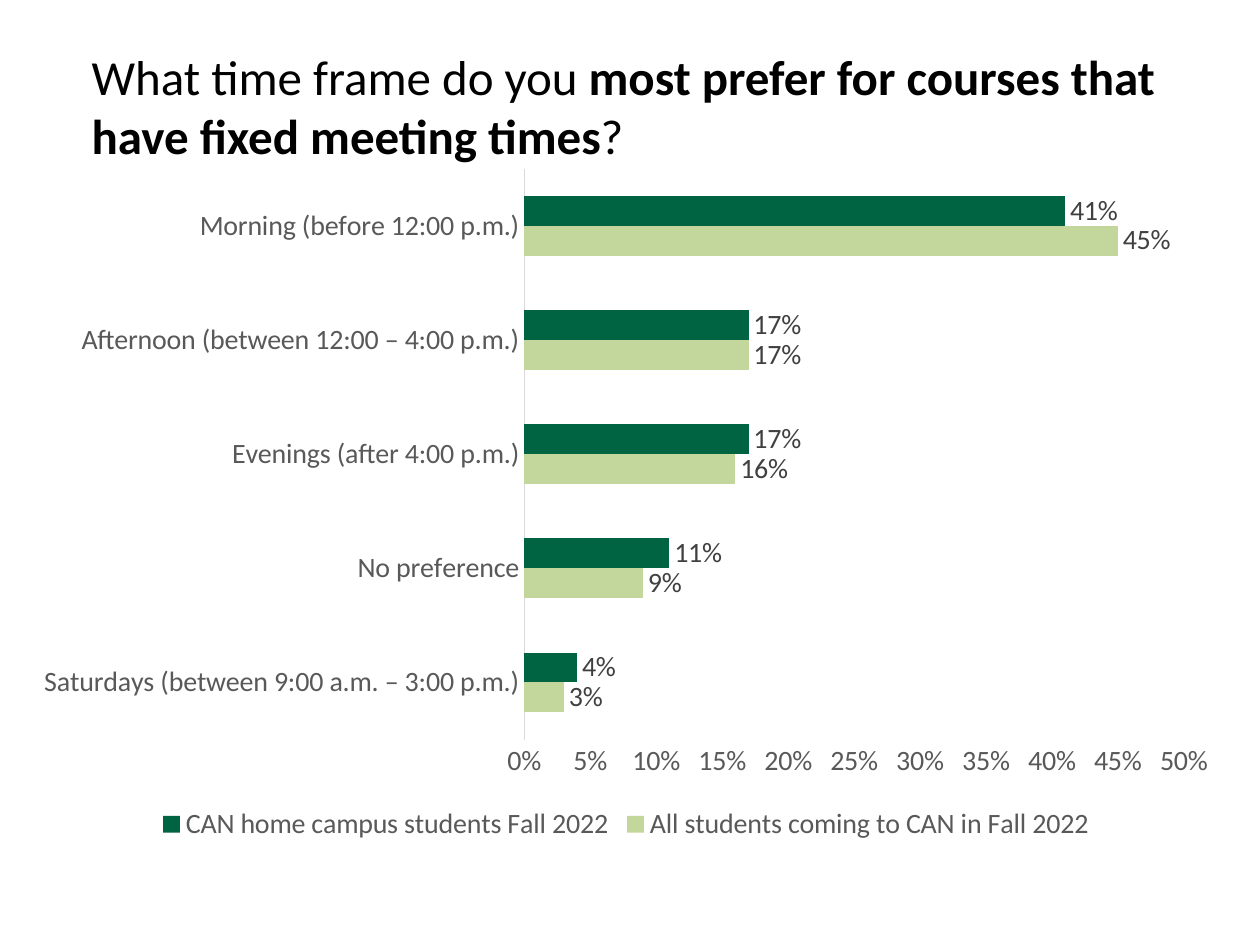
from pptx import Presentation
from pptx.chart.data import CategoryChartData
from pptx.dml.color import RGBColor
from pptx.enum.chart import XL_CHART_TYPE, XL_LABEL_POSITION, XL_LEGEND_POSITION, XL_TICK_MARK
from pptx.enum.text import MSO_ANCHOR, MSO_AUTO_SIZE, PP_ALIGN
from pptx.util import Emu, Pt

BAR_CLUSTERED = XL_CHART_TYPE.BAR_CLUSTERED
OUTSIDE_END = XL_LABEL_POSITION.OUTSIDE_END
LEGEND_BOTTOM = XL_LEGEND_POSITION.BOTTOM
NO_TICK = XL_TICK_MARK.NONE
TOP = MSO_ANCHOR.TOP
GROW = MSO_AUTO_SIZE.SHAPE_TO_FIT_TEXT
LEFT = PP_ALIGN.LEFT

PX_PER_INCH = 126
SLIDE_WIDTH, SLIDE_HEIGHT = 1260, 945
FONT = "Calibri"
TITLE_SIZE, CHART_SIZE = 28, 16
TITLE_ONLY_LAYOUT = 5
PERCENT = "0%"
COLORS = {
    "black": "000000",
    "label": "404040",
    "axis_text": "595959",
    "axis_line": "D9D9D9",
    "dark_green": "006342",
    "light_green": "C3D69B",
}

TITLE_RUNS = [
    ("What time frame do you ", False),
    ("most prefer for courses that have fixed meeting times", True),
    ("?", False),
]
TIME_FRAMES = [
    "Saturdays (between 9:00 a.m. – 3:00 p.m.)",
    "No preference",
    "Evenings (after 4:00 p.m.)",
    "Afternoon (between 12:00 – 4:00 p.m.)",
    "Morning (before 12:00 p.m.)",
]
STUDENT_GROUPS = [
    ("All students coming to CAN in Fall 2022", (0.03, 0.09, 0.16, 0.17, 0.45), "light_green"),
    ("CAN home campus students Fall 2022", (0.04, 0.11, 0.17, 0.17, 0.41), "dark_green"),
]


def px(length):
    return Emu(round(length * 914400 / PX_PER_INCH))


def color(name):
    return RGBColor.from_string(COLORS[name])


def style_font(font, size, color_name):
    font.name = FONT
    font.size = Pt(size)
    font.color.rgb = color(color_name)


class SlideBuilder:
    """Holds the current slide and draws its elements in the shared style."""

    def __init__(self, slide):
        self.slide = slide

    def title(self, runs, left, top, width, height):
        shape = self.slide.shapes.title
        shape.left, shape.top, shape.width, shape.height = map(px, (left, top, width, height))
        frame = shape.text_frame
        frame.word_wrap = True
        frame.auto_size = GROW
        frame.vertical_anchor = TOP
        paragraph = frame.paragraphs[0]
        paragraph.alignment = LEFT
        style_font(paragraph.font, TITLE_SIZE, "black")
        for text, bold in runs:
            run = paragraph.add_run()
            run.text = text
            run.font.bold = bold

    def bar_chart(self, categories, groups, left, top, width, height):
        data = CategoryChartData(number_format=PERCENT)
        data.categories = categories
        for name, values, _ in groups:
            data.add_series(name, values)
        chart = self.slide.shapes.add_chart(
            BAR_CLUSTERED, *map(px, (left, top, width, height)), data
        ).chart
        style_font(chart.font, CHART_SIZE, "black")
        chart.has_title = False
        self.axes(chart)
        self.legend(chart)

        plot = chart.plots[0]
        plot.gap_width = 182
        plot.overlap = 0
        plot.vary_by_categories = False
        for series, (_, _, fill_name) in zip(plot.series, groups):
            series.format.fill.solid()
            series.format.fill.fore_color.rgb = color(fill_name)
            series.invert_if_negative = False
            labels = series.data_labels
            labels.show_value = True
            labels.position = OUTSIDE_END
            labels.number_format = PERCENT
            labels.number_format_is_linked = False
            style_font(labels.font, CHART_SIZE, "label")

    def axes(self, chart):
        for axis in (chart.category_axis, chart.value_axis):
            axis.major_tick_mark = axis.minor_tick_mark = NO_TICK
            axis.has_major_gridlines = False
            style_font(axis.tick_labels.font, CHART_SIZE, "axis_text")
        category_line = chart.category_axis.format.line
        category_line.color.rgb = color("axis_line")
        category_line.width = Pt(0.75)

        value_axis = chart.value_axis
        value_axis.minimum_scale = 0
        value_axis.maximum_scale = 0.5
        value_axis.major_unit = 0.05
        value_axis.format.line.fill.background()
        value_axis.tick_labels.number_format = PERCENT
        value_axis.tick_labels.number_format_is_linked = False

    def legend(self, chart):
        chart.has_legend = True
        chart.legend.position = LEGEND_BOTTOM
        chart.legend.include_in_layout = False
        style_font(chart.legend.font, CHART_SIZE, "axis_text")


def main():
    presentation = Presentation()
    presentation.slide_width = px(SLIDE_WIDTH)
    presentation.slide_height = px(SLIDE_HEIGHT)
    layout = presentation.slide_layouts[TITLE_ONLY_LAYOUT]
    builder = SlideBuilder(presentation.slides.add_slide(layout))
    builder.bar_chart(TIME_FRAMES, STUDENT_GROUPS, 20, 155, 1212, 692)
    builder.title(TITLE_RUNS, 79, 40, 1110, 131)
    presentation.save("out.pptx")


if __name__ == "__main__":
    main()
